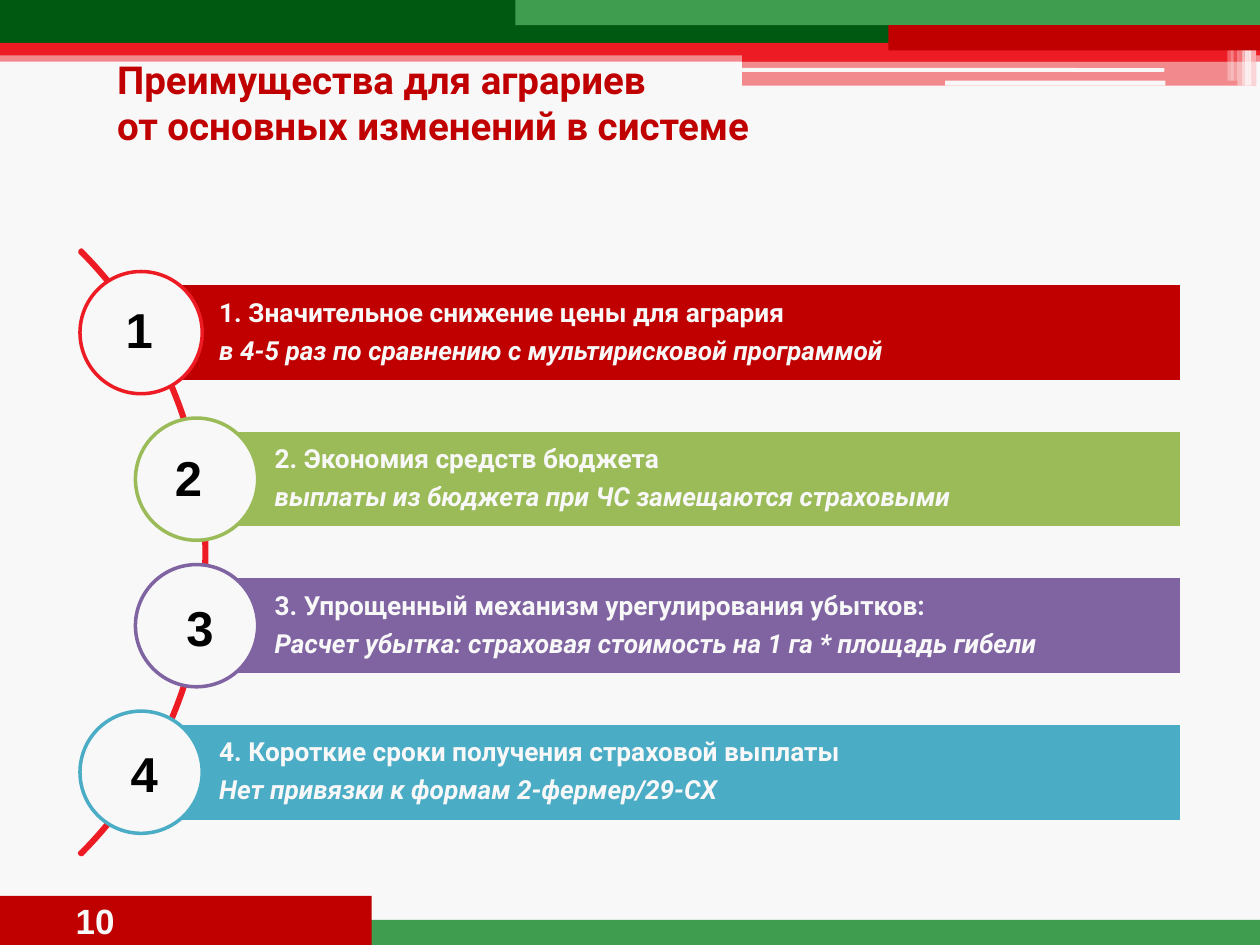
from lxml import etree
from pptx import Presentation
from pptx import util as u
from pptx.dml.color import RGBColor
from pptx.enum import shapes, text
from pptx.oxml import ns

COLORS = {
    "paper": "F8F8F8", "white": "FFFFFF", "black": "000000",
    "dark_green": "005910", "green": "3F9D4F",
    "red": "ED1C24", "dark_red": "C00000",
    "olive": "9BBB59", "purple": "8064A2", "blue": "4BACC6",
}
SHAPE = shapes.MSO_SHAPE
ALIGN = text.PP_ALIGN
ANCHOR = text.MSO_ANCHOR

HEADER = [
    (0, 0.4, 10, 0.09, "red", 50),
    (0, 0, 10, 0.34, "dark_green", 100),
    (0, 0.34, 10, 0.1, "red", 100),
    (5.89, 0.39, 4.08, 0.1, "red", 100),
    (5.89, 0.48, 4.08, 0.2, "red", 50),
]
SLITS = [(5.89, 0.54, 3.35, 0.03), (7.5, 0.64, 1.75, 0.04)]
GLINTS = [
    (9.91, 0.06, 0.68, 65), (9.88, 0.05, 0.68, 65), (9.86, 0.05, 0.68, 60),
    (9.82, 0.05, 0.68, 40), (9.77, 0.06, 0.64, 20), (9.74, 0.05, 0.64, 30),
]
BANDS = [
    (0, 7.3, 10, 0.2, "green"),
    (4.09, 0, 5.91, 0.2, "green"),
    (7.05, 0.2, 2.95, 0.2, "dark_red"),
]
BENEFITS = [
    ("1. Значительное снижение цены для агрария",
     "в 4-5 раз по сравнению с мультирисковой программой",
     1.12, "dark_red", "red", (0.83, 2.33, 0.55)),
    ("2. Экономия средств бюджета",
     "выплаты из бюджета при ЧС замещаются страховыми",
     1.56, "olive", "olive", (1.22, 3.5, 0.55)),
    ("3. Упрощенный механизм урегулирования убытков:",
     "Расчет убытка: страховая стоимость на 1 га * площадь гибели",
     1.56, "purple", "purple", (1.38, 4.69, 0.39)),
    ("4. Короткие сроки получения страховой выплаты",
     "Нет привязки к формам 2-фермер/29-СХ",
     1.12, "blue", "blue", (0.87, 5.85, 0.55)),
]
BAR_RIGHT, BAR_TOP, BAR_HEIGHT, BAR_STEP = 9.38, 2.25, 0.78, 1.163
CIRCLE = 0.97


def rgb(name):
    return RGBColor.from_string(COLORS[name])


def add_shape(s, kind, x, y, w, h, fill=None, alpha=100, line=None):
    sp = s.shapes.add_shape(kind, *map(u.Inches, (x, y, w, h)))
    sp.shadow.inherit = False
    if fill:
        sp.fill.solid()
        sp.fill.fore_color.rgb = rgb(fill)
        if alpha < 100:
            color = sp.fill._xPr.find(".//" + ns.qn("a:srgbClr"))
            etree.SubElement(color, ns.qn("a:alpha"), val=str(alpha * 1000))
    else:
        sp.fill.background()
    if line:
        sp.line.color.rgb = rgb(line)
        sp.line.width = u.Pt(2)
    else:
        sp.line.fill.background()
    return sp


def write(tf, content, *, size, color, font="Roboto", italic=False, align=ALIGN.LEFT,
          spacing=None, after=None, more=False):
    p = tf.add_paragraph() if more else tf.paragraphs[0]
    p.alignment = align
    if spacing:
        p.line_spacing = spacing
    if after is not None:
        p.space_after = u.Pt(after)
    p.text = content
    for r in p.runs:
        r.font.name = font
        r.font.size = u.Pt(size)
        r.font.bold = True
        r.font.italic = italic
        r.font.color.rgb = rgb(color)
    return p


def add_header(s):
    for x, y, w, h, fill, alpha in HEADER:
        add_shape(s, SHAPE.RECTANGLE, x, y, w, h, fill, alpha)
    for box in SLITS:
        add_shape(s, SHAPE.ROUNDED_RECTANGLE, *box, "paper")
    for x, w, h, alpha in GLINTS:
        add_shape(s, SHAPE.RECTANGLE, x, 0, w, h, "white", alpha)
    for x, y, w, h, fill in BANDS:
        add_shape(s, SHAPE.RECTANGLE, x, y, w, h, fill)


def add_page_number(s):
    sp = add_shape(s, SHAPE.RECTANGLE, 0, 7.11, 2.95, 0.39, "dark_red")
    tf = sp.text_frame
    tf.vertical_anchor = ANCHOR.MIDDLE
    tf.margin_left = u.Inches(0.6)
    write(tf, "10", size=20, color="paper", font="Arial")


def set_title(s):
    sp = s.shapes.title
    sp.left, sp.top, sp.width, sp.height = map(u.Inches, (0.83, 0.52, 9.06, 0.71))
    tf = sp.text_frame
    tf.auto_size = text.MSO_AUTO_SIZE.NONE
    tf.vertical_anchor = ANCHOR.BOTTOM
    write(tf, "Преимущества для аграриев \vот основных изменений в системе",
          size=22, color="dark_red")


def add_arc(s):
    sp = add_shape(s, SHAPE.BLOCK_ARC, -5.15, 0.99, 6.79, 6.79, line="red")
    for i, value in enumerate((189, 27, 0.003)):
        sp.adjustments[i] = value


def add_benefit(s, index, heading, detail, x, fill, ring):
    y = BAR_TOP + index * BAR_STEP
    bar = add_shape(s, SHAPE.RECTANGLE, x, y, BAR_RIGHT - x, BAR_HEIGHT, fill, line="paper")
    tf = bar.text_frame
    tf.word_wrap = True
    tf.vertical_anchor = ANCHOR.MIDDLE
    tf.margin_left = u.Inches(0.62)
    tf.margin_top = tf.margin_right = tf.margin_bottom = u.Inches(0.04)
    style = dict(size=15, color="paper", spacing=0.9, after=5.5)
    write(tf, heading, **style)
    write(tf, detail, italic=True, more=True, **style)
    add_shape(s, SHAPE.OVAL, x - CIRCLE / 2, y + (BAR_HEIGHT - CIRCLE) / 2,
              CIRCLE, CIRCLE, "paper", line=ring)


def add_number(s, number, x, y, w):
    tf = s.shapes.add_textbox(*map(u.Inches, (x, y, w, 0.57))).text_frame
    tf.word_wrap = True
    write(tf, str(number), size=28, color="black", font="Arial", align=ALIGN.CENTER)


def main():
    prs = Presentation()
    prs.slide_width, prs.slide_height = u.Inches(10), u.Inches(7.5)
    s = prs.slides.add_slide(prs.slide_layouts[5])
    s.background.fill.solid()
    s.background.fill.fore_color.rgb = rgb("paper")
    add_header(s)
    add_page_number(s)
    set_title(s)
    add_arc(s)
    for i, (*benefit, number_box) in enumerate(BENEFITS):
        add_benefit(s, i, *benefit)
        add_number(s, i + 1, *number_box)
    prs.save("out.pptx")


if __name__ == "__main__":
    main()
